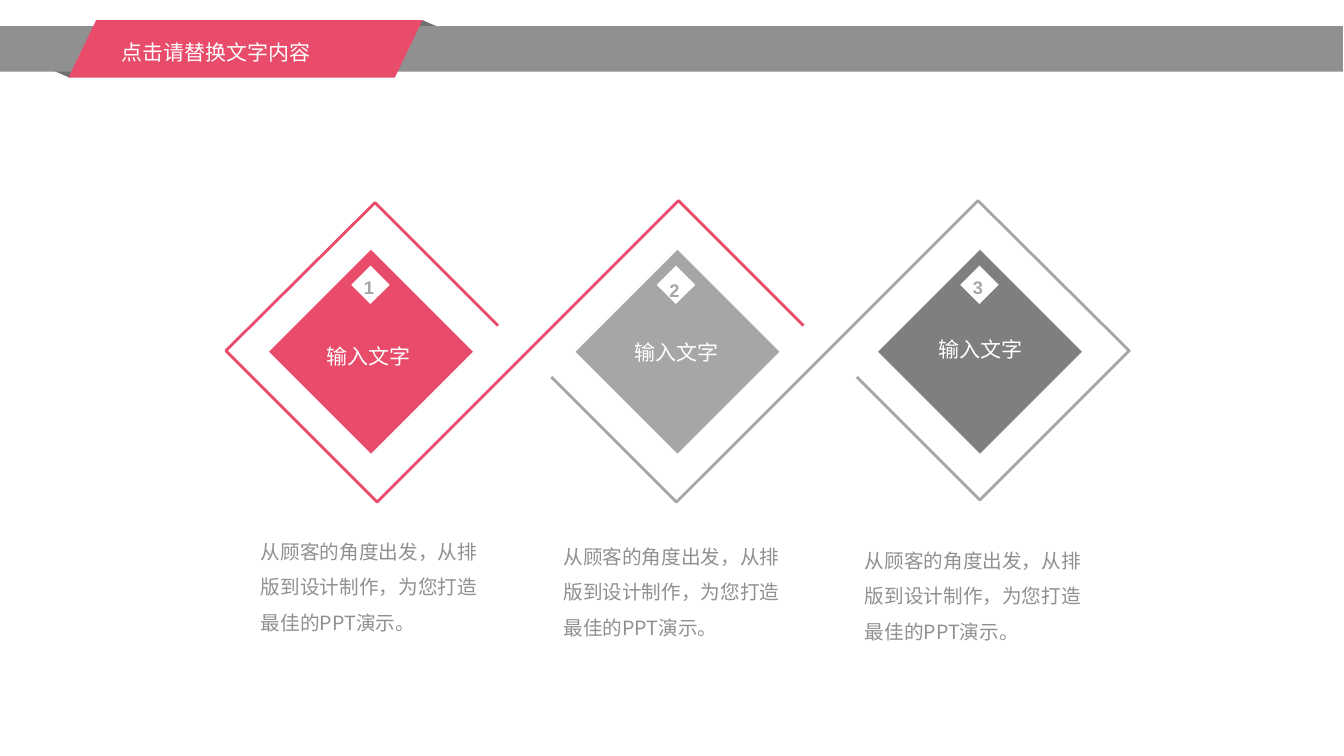
from dataclasses import dataclass

from lxml.etree import SubElement
from pptx import Presentation
from pptx.dml.color import RGBColor
from pptx.enum.shapes import MSO_SHAPE as Preset
from pptx.enum.text import MSO_ANCHOR as Anchor, MSO_AUTO_SIZE as AutoSize, PP_ALIGN as Align
from pptx.oxml.ns import qn
from pptx.shapes.autoshape import Shape
from pptx.slide import Slide
from pptx.util import Inches, Pt

COLORS = {
    "pink": "E84C6A",
    "silver": "A6A6A6",
    "charcoal": "7F7F7F",
    "band": "909090",
    "fold": "6F6F6F",
    "white": "FFFFFF",
}
CJK_FONT = "Noto Sans CJK SC"
LATIN_FONT = "Arial"
LABEL = "输入文字"
DESCRIPTION = "从顾客的角度出发，从排版到设计制作，为您打造最佳的PPT演示。"
TITLE = "点击请替换文字内容"
TILE_SIZE, TILE_TOP = 1.44, 2.77
BADGE_SIZE, BADGE_TOP = 0.27, 2.69


@dataclass(frozen=True)
class Box:
    left: float
    top: float
    width: float
    height: float


@dataclass(frozen=True)
class TextStyle:
    size: float
    color: str
    font: str = LATIN_FONT
    bold: bool = False
    spacing: float = 1.2
    align: Align = Align.CENTER
    anchor: Anchor = Anchor.TOP
    padded: bool = False
    wrap: bool = True


@dataclass(frozen=True)
class Step:
    number: str
    color: str
    tile_left: float
    badge_left: float
    number_top: float
    number_anchor: Anchor
    label: Box
    description: Box


@dataclass(frozen=True)
class Ribbon:
    color: str
    points: tuple[tuple[float, float], ...]


STEPS = (
    Step("1", "pink", 2.96, 3.54, 2.7, Anchor.MIDDLE,
         Box(3.19, 3.36, 0.93, 0.3), Box(2.49, 5.19, 2.5, 1.16)),
    Step("2", "silver", 6, 6.57, 2.73, Anchor.TOP,
         Box(6.24, 3.32, 0.94, 0.3), Box(5.49, 5.24, 2.5, 1.16)),
    Step("3", "charcoal", 9, 9.58, 2.7, Anchor.MIDDLE,
         Box(9.26, 3.29, 0.94, 0.3), Box(8.48, 5.28, 2.5, 1.16)),
)
RIBBONS = (
    Ribbon("pink", ((7.97, 3.23), (6.73, 1.99), (3.74, 4.98),
                    (2.24, 3.48), (3.72, 2.01), (4.94, 3.23))),
    Ribbon("silver", ((5.47, 3.74), (6.71, 4.98), (9.7, 1.99),
                      (11.2, 3.48), (9.72, 4.96), (8.5, 3.74))),
)

DESCRIPTION_STYLE = TextStyle(14, "band", CJK_FONT, spacing=1.5, align=Align.LEFT, padded=True)
TITLE_STYLE = TextStyle(15, "white", spacing=1.5, align=Align.LEFT, padded=True)
LABEL_STYLE = TextStyle(15, "white")


def rgb(name: str) -> RGBColor:
    return RGBColor.from_string(COLORS[name])


def add_block(slide: Slide, preset: Preset, box: Box, fill: str,
              rotation: float = 0, outline: str = "") -> Shape:
    block = slide.shapes.add_shape(preset, Inches(box.left), Inches(box.top),
                                   Inches(box.width), Inches(box.height))
    block.shadow.inherit = False
    block.rotation = rotation
    block.fill.solid()
    block.fill.fore_color.rgb = rgb(fill)
    if outline:
        block.line.color.rgb = rgb(outline)
        block.line.width = Pt(0.5)
    else:
        block.line.fill.background()
    return block


def add_text(slide: Slide, box: Box, text: str, style: TextStyle) -> None:
    frame = slide.shapes.add_textbox(Inches(box.left), Inches(box.top),
                                     Inches(box.width), Inches(box.height)).text_frame
    frame.word_wrap = style.wrap
    frame.auto_size = AutoSize.SHAPE_TO_FIT_TEXT
    frame.vertical_anchor = style.anchor
    side, edge = (0.1, 0.05) if style.padded else (0, 0)
    frame.margin_left = frame.margin_right = Inches(side)
    frame.margin_top = frame.margin_bottom = Inches(edge)
    paragraph = frame.paragraphs[0]
    paragraph.alignment = style.align
    paragraph.line_spacing = style.spacing
    run = paragraph.add_run()
    run.text = text
    run.font.size = Pt(style.size)
    run.font.bold = style.bold
    run.font.color.rgb = rgb(style.color)
    run.font.name = style.font
    SubElement(run.font._element, qn("a:ea"), typeface=CJK_FONT)


def add_ribbon(slide: Slide, ribbon: Ribbon) -> None:
    start, *rest = [(Inches(x), Inches(y)) for x, y in ribbon.points]
    builder = slide.shapes.build_freeform(*start)
    builder.add_line_segments(rest, close=False)
    outline = builder.convert_to_shape()
    outline.shadow.inherit = False
    outline.fill.background()
    outline.line.color.rgb = rgb(ribbon.color)
    outline.line.width = Pt(2)


def add_step(slide: Slide, step: Step) -> None:
    add_block(slide, Preset.RECTANGLE, Box(step.tile_left, TILE_TOP, TILE_SIZE, TILE_SIZE),
              step.color, rotation=315, outline="white")
    add_block(slide, Preset.RECTANGLE, Box(step.badge_left, BADGE_TOP, BADGE_SIZE, BADGE_SIZE),
              "white", rotation=315)
    add_text(slide, Box(step.badge_left + 0.07, step.number_top, 0.1, 0.26), step.number,
             TextStyle(13, "silver", bold=True, anchor=step.number_anchor, wrap=False))
    add_text(slide, step.label, LABEL, LABEL_STYLE)
    add_text(slide, step.description, DESCRIPTION, DESCRIPTION_STYLE)


def add_header(slide: Slide) -> None:
    add_block(slide, Preset.ISOSCELES_TRIANGLE, Box(3.59, 0.2, 1.2, 0.26), "fold")
    add_block(slide, Preset.ISOSCELES_TRIANGLE, Box(0.09, 0.51, 1.2, 0.26), "fold", rotation=180)
    add_block(slide, Preset.RECTANGLE, Box(-0.01, 0.26, 13.33, 0.45), "band")
    banner = add_block(slide, Preset.PARALLELOGRAM, Box(0.68, 0.2, 3.51, 0.57), "pink")
    banner.adjustments[0] = 0.48
    add_text(slide, Box(1.11, 0.22, 2.63, 0.48), TITLE, TITLE_STYLE)


def main() -> None:
    deck = Presentation()
    deck.slide_width, deck.slide_height = Inches(13.33), Inches(7.5)
    slide = deck.slides.add_slide(deck.slide_layouts[6])
    for ribbon in RIBBONS:
        add_ribbon(slide, ribbon)
    for step in STEPS:
        add_step(slide, step)
    add_header(slide)
    deck.save("out.pptx")


if __name__ == "__main__":
    main()
